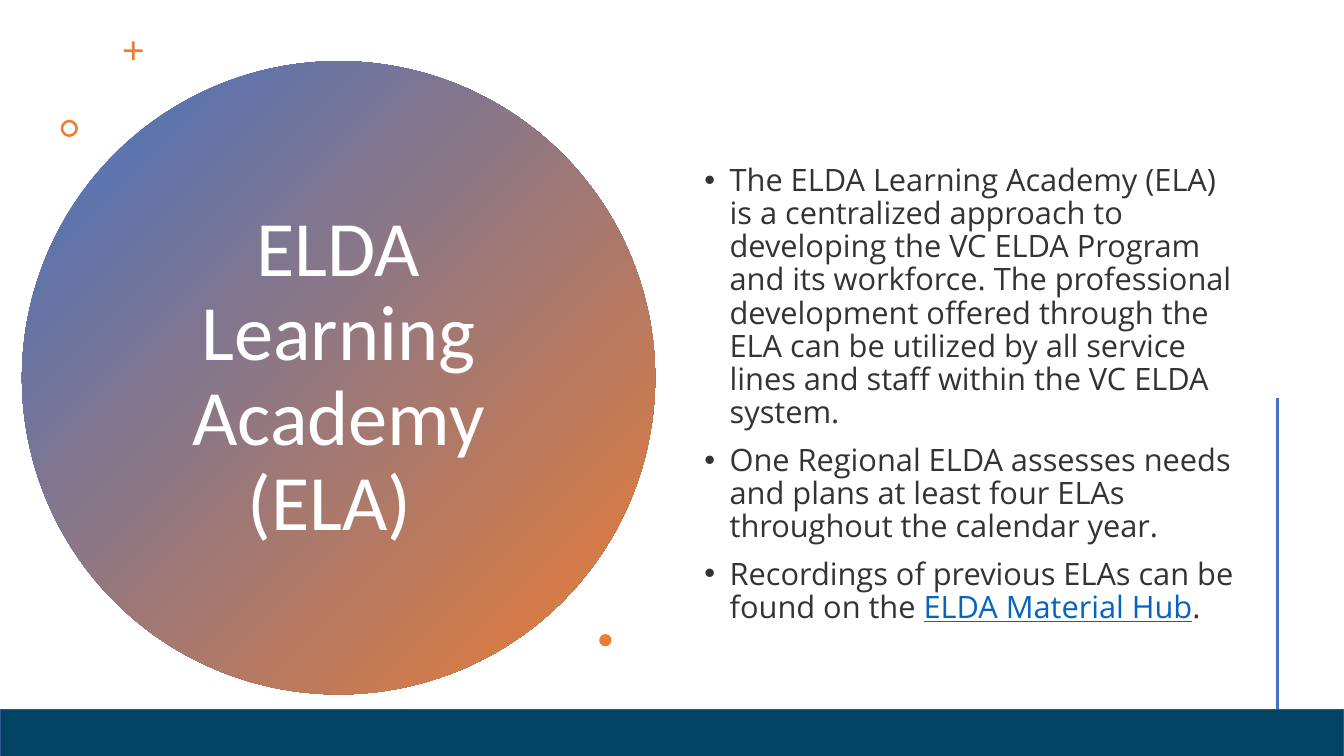
from dataclasses import dataclass

from lxml.etree import SubElement
from pptx import Presentation
from pptx.dml.color import RGBColor
from pptx.enum.shapes import MSO_CONNECTOR, MSO_SHAPE
from pptx.enum.text import MSO_ANCHOR, MSO_AUTO_SIZE, PP_ALIGN
from pptx.oxml.ns import qn
from pptx.util import Pt


@dataclass(frozen=True)
class Theme:
    blue: str = "4472C4"
    orange: str = "ED7D31"
    navy: str = "004363"
    navy_edge: str = "325491"
    white: str = "FFFFFF"
    ink: str = "333333"
    link: str = "0563C1"
    title_font: str = "Calibri"
    body_font: str = "Open Sans"
    title_size: float = 56
    body_size: float = 22


def color(value):
    return RGBColor.from_string(value)


def write(paragraph, text, *, font, size, fill, underline=False):
    run = paragraph.add_run()
    run.text = text
    run.font.name = font
    run.font.size = Pt(size)
    run.font.color.rgb = color(fill)
    run.font.underline = underline


class SlideBuilder:
    """Adds styled elements to one slide, with lengths in points."""

    def __init__(self, slide, theme):
        self.slide = slide
        self.theme = theme

    def place(self, placeholder, left, top, width, height):
        placeholder.left, placeholder.top = Pt(left), Pt(top)
        placeholder.width, placeholder.height = Pt(width), Pt(height)
        frame = placeholder.text_frame
        frame.word_wrap = True
        frame.auto_size = MSO_AUTO_SIZE.NONE
        frame.vertical_anchor = MSO_ANCHOR.MIDDLE
        return frame

    def title(self, text, *box):
        paragraph = self.place(self.slide.shapes.title, *box).paragraphs[0]
        paragraph.alignment = PP_ALIGN.CENTER
        paragraph.line_spacing = 0.9
        write(paragraph, text, font=self.theme.title_font,
              size=self.theme.title_size, fill=self.theme.white)

    def bullets(self, items, *box):
        frame = self.place(self.slide.placeholders[1], *box)
        for index, runs in enumerate(items):
            paragraph = frame.add_paragraph() if index else frame.paragraphs[0]
            paragraph.alignment = PP_ALIGN.LEFT
            paragraph.line_spacing = 0.9
            paragraph.space_before = Pt(10)
            properties = paragraph._p.get_or_add_pPr()
            properties.set("marL", str(Pt(18)))
            properties.set("indent", str(Pt(-18)))
            SubElement(properties, qn("a:buFont")).set("typeface", "Arial")
            SubElement(properties, qn("a:buChar")).set("char", "•")
            for text, is_link in runs:
                write(paragraph, text, font=self.theme.body_font,
                      size=self.theme.body_size, underline=is_link,
                      fill=self.theme.link if is_link else self.theme.ink)

    def shape(self, kind, left, top, width, height, fill, edge=None, adjustment=None):
        shape = self.slide.shapes.add_shape(kind, Pt(left), Pt(top), Pt(width), Pt(height))
        shape.shadow.inherit = False
        shape.fill.solid()
        shape.fill.fore_color.rgb = color(fill)
        if edge:
            shape.line.color.rgb = color(edge)
            shape.line.width = Pt(1)
        else:
            shape.line.fill.background()
        if adjustment is not None:
            shape.adjustments[0] = adjustment
        return shape

    def gradient_circle(self, left, top, diameter):
        circle = self.shape(MSO_SHAPE.OVAL, left, top, diameter, diameter, self.theme.blue)
        circle.fill.gradient()
        circle.fill.gradient_angle = 315
        for stop, value in zip(circle.fill.gradient_stops, (self.theme.blue, self.theme.orange)):
            stop.color.rgb = color(value)
        self.slide.shapes._spTree.insert(2, circle._element)

    def vertical_line(self, x, top, bottom):
        line = self.slide.shapes.add_connector(
            MSO_CONNECTOR.STRAIGHT, Pt(x), Pt(top), Pt(x), Pt(bottom))
        line.line.color.rgb = color(self.theme.blue)
        line.line.width = Pt(2)
        SubElement(line._element.spPr, qn("a:effectLst"))


def main():
    theme = Theme()
    presentation = Presentation()
    presentation.slide_width, presentation.slide_height = Pt(960), Pt(540)
    slide = presentation.slides.add_slide(presentation.slide_layouts[1])
    builder = SlideBuilder(slide, theme)

    builder.title("ELDA Learning Academy (ELA) ", 98.3, 101.8, 287, 336)
    builder.bullets([
        [("The ELDA Learning Academy (ELA) is a centralized approach to developing "
          "the VC ELDA Program and its workforce. The professional development "
          "offered through the ELA can be utilized by all service lines and staff "
          "within the VC ELDA system.", False)],
        [("One Regional ELDA assesses needs and plans at least four ELAs "
          "throughout the calendar year.", False)],
        [("Recordings of previous ELAs can be found on the ", False),
         ("ELDA Material Hub", True), (".", False)],
    ], 496, 41, 398, 482)
    builder.gradient_circle(15.7, 43.7, 452.3)
    builder.shape(MSO_SHAPE.CROSS, 88.5, 29.5, 13.5, 13.5, theme.orange, adjustment=0.43)
    builder.shape(MSO_SHAPE.DONUT, 43.3, 85.5, 12.4, 12.4, theme.orange, adjustment=0.15)
    builder.shape(MSO_SHAPE.OVAL, 428, 452.9, 8.8, 8.8, theme.orange)
    builder.vertical_line(912.3, 284, 539.5)
    builder.shape(MSO_SHAPE.RECTANGLE, 0, 507, 960, 41, theme.navy, edge=theme.navy_edge)

    presentation.save("out.pptx")


if __name__ == "__main__":
    main()
